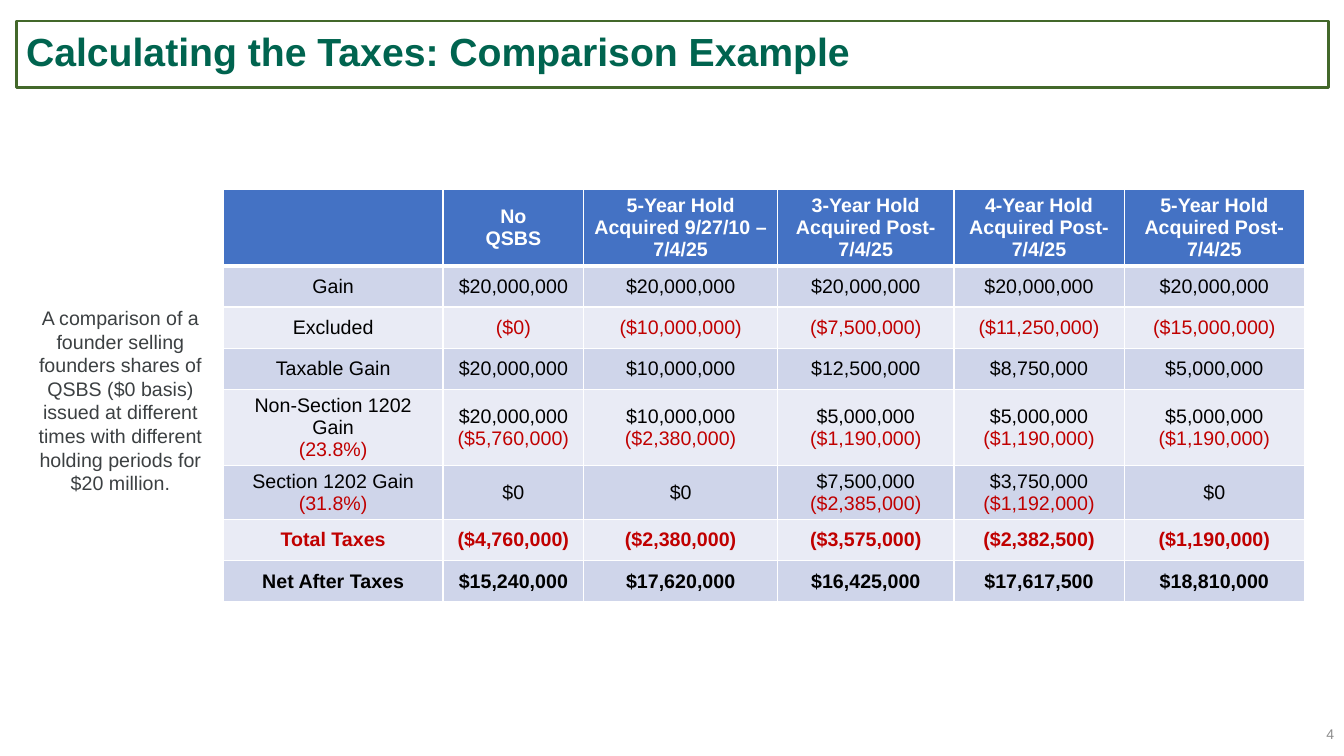
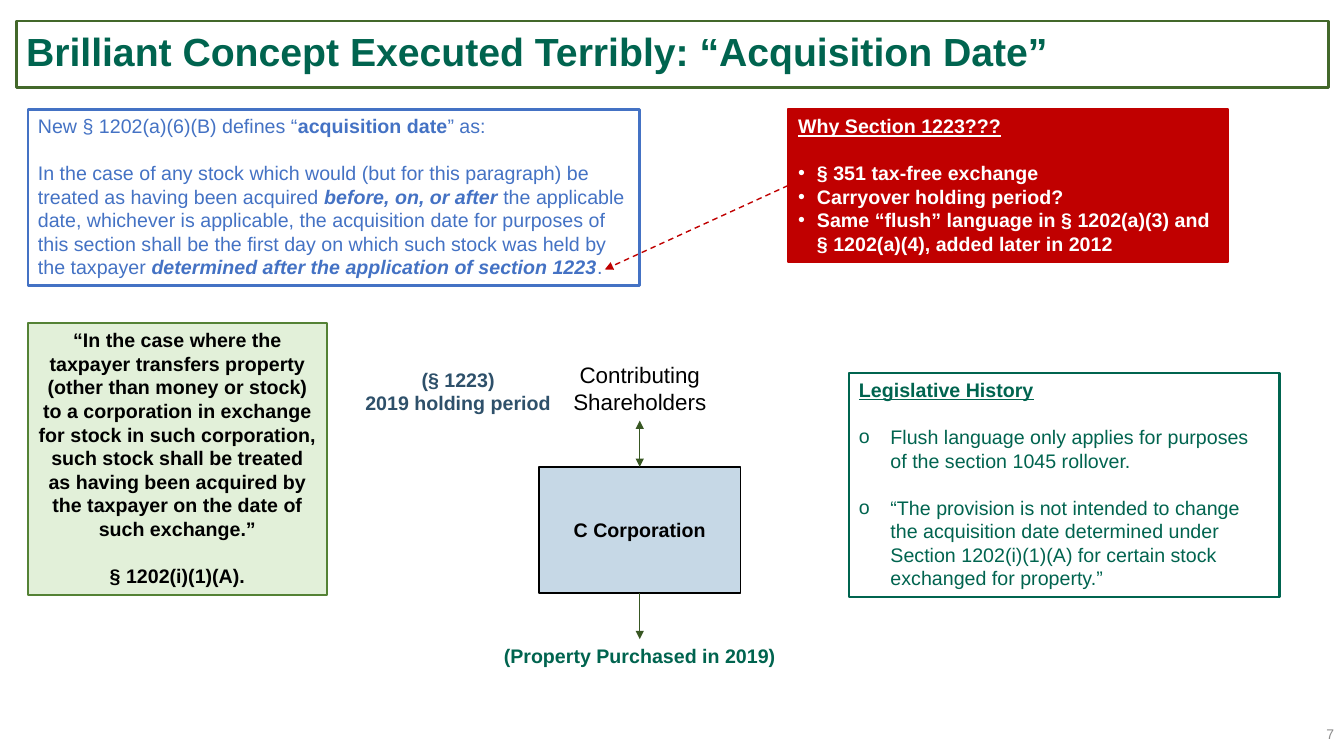
from dataclasses import dataclass
from typing import Any, Optional

from lxml.etree import SubElement
from pptx import Presentation
from pptx.dml.color import RGBColor
from pptx.enum.dml import MSO_LINE
from pptx.enum.shapes import MSO_CONNECTOR, MSO_SHAPE
from pptx.enum.text import MSO_ANCHOR as Anchor, PP_ALIGN as Align
from pptx.oxml.ns import qn
from pptx.util import Pt


@dataclass(frozen=True)
class Theme:
    font: str = "Arial"
    title_size: float = 28
    label_size: float = 16
    body_size: float = 14
    number_size: float = 10
    text_pitch: float = 1.2
    table_pitch: float = 1.12
    white: str = "FFFFFF"
    black: str = "000000"
    green: str = "00644F"
    title_frame: str = "43682A"
    arrow_green: str = "385723"
    statute_fill: str = "E2F0D9"
    statute_frame: str = "548235"
    blue: str = "4472C4"
    navy: str = "2E506A"
    corporation: str = "C6D8E6"
    red: str = "C00000"
    grey: str = "8C8C8C"
    caption: str = "3C4042"
    bands: tuple[str, str] = ("CFD5EA", "E9EBF5")


THEME = Theme()


@dataclass(frozen=True)
class Run:
    text: str
    bold: bool = False
    italic: bool = False
    underline: bool = False


@dataclass(frozen=True)
class Para:
    runs: tuple[Run, ...]
    gap: bool = False
    bullet: str = ""
    indent: float = 0


@dataclass(frozen=True)
class Panel:
    at: tuple[float, float, float, float]
    paras: tuple[Para, ...]
    color: str
    size: float = THEME.body_size
    align: Align = Align.LEFT
    anchor: Anchor = Anchor.TOP
    wrap: bool = True
    fill: Optional[str] = None
    frame: Optional[str] = None
    weight: float = 1
    spacing: Optional[float] = None


@dataclass(frozen=True)
class Arrow:
    start: tuple[float, float]
    end: tuple[float, float]
    color: str
    weight: float = 1
    ends: tuple[str, ...] = ("tailEnd",)
    dashed: bool = False


def rgb(color: str) -> RGBColor:
    return RGBColor.from_string(color)


def apply(target: Any, values: dict[str, Any]) -> None:
    for name, value in values.items():
        setattr(target, name, value)


def plain(*lines: str, bold: bool = False) -> tuple[Para, ...]:
    return tuple(Para((Run(line, bold),)) for line in lines)


def add_run(paragraph: Any, run: Run, size: float, color: str) -> None:
    piece = paragraph.add_run()
    piece.text = run.text
    apply(piece.font, {"name": THEME.font, "size": Pt(size), "bold": run.bold,
                       "italic": run.italic, "underline": run.underline})
    piece.font.color.rgb = rgb(color)


def add_bullet(paragraph: Any, para: Para, color: str) -> None:
    props = paragraph._p.get_or_add_pPr()
    props.set("marL", str(Pt(para.indent)))
    props.set("indent", str(-Pt(para.indent)))
    bullet_color = SubElement(props, qn("a:buClr"))
    SubElement(bullet_color, qn("a:srgbClr"), val=color)
    SubElement(props, qn("a:buFont"), typeface=THEME.font)
    SubElement(props, qn("a:buChar"), char=para.bullet)


def draw_panel(slide: Any, panel: Panel) -> None:
    place = [Pt(value) for value in panel.at]
    if panel.fill or panel.frame:
        shape = slide.shapes.add_shape(MSO_SHAPE.RECTANGLE, *place)
        shape.shadow.inherit = False
    else:
        shape = slide.shapes.add_textbox(*place)
    if panel.fill:
        shape.fill.solid()
        shape.fill.fore_color.rgb = rgb(panel.fill)
    else:
        shape.fill.background()
    if panel.frame:
        shape.line.color.rgb = rgb(panel.frame)
        shape.line.width = Pt(panel.weight)
    frame = shape.text_frame
    apply(frame, {"word_wrap": panel.wrap, "vertical_anchor": panel.anchor})
    pitch = Pt(panel.size * THEME.text_pitch)
    for index, para in enumerate(panel.paras):
        paragraph = frame.add_paragraph() if index else frame.paragraphs[0]
        apply(paragraph, {"alignment": panel.align,
                          "line_spacing": panel.spacing or pitch,
                          "space_before": pitch if para.gap else Pt(0)})
        if para.bullet:
            add_bullet(paragraph, para, panel.color)
        for run in para.runs:
            add_run(paragraph, run, panel.size, panel.color)


def draw_arrow(slide: Any, arrow: Arrow) -> None:
    points = [Pt(value) for value in arrow.start + arrow.end]
    connector = slide.shapes.add_connector(MSO_CONNECTOR.STRAIGHT, *points)
    connector.line.color.rgb = rgb(arrow.color)
    connector.line.width = Pt(arrow.weight)
    if arrow.dashed:
        connector.line.dash_style = MSO_LINE.DASH
    outline = connector.line._get_or_add_ln()
    for end in arrow.ends:
        SubElement(outline, qn(f"a:{end}"), type="triangle")
    SubElement(connector._element.spPr, qn("a:effectLst"))


def add_slide(deck: Any, title: str, number: int) -> Any:
    slide = deck.slides.add_slide(deck.slide_layouts[6])
    draw_panel(slide, Panel((11.5, 15, 937.5, 47.5), plain(title, bold=True), THEME.green,
                            THEME.title_size, anchor=Anchor.MIDDLE,
                            frame=THEME.title_frame, weight=2, spacing=0.9))
    draw_panel(slide, Panel((932, 510, 28, 29), plain(str(number)), THEME.grey,
                            THEME.number_size, Align.RIGHT, Anchor.MIDDLE))
    return slide


def add_borders(cell: Any, header: bool) -> None:
    props = cell._tc.get_or_add_tcPr()
    for side in "LRTB":
        width = Pt(3 if header and side == "B" else 1)
        edge = SubElement(props, qn(f"a:ln{side}"), w=str(width))
        paint = SubElement(edge, qn("a:solidFill"))
        SubElement(paint, qn("a:srgbClr"), val=THEME.white)


TAX_ROWS = (
    ("", "No\nQSBS", "5-Year Hold\nAcquired 9/27/10 –\n7/4/25",
     "3-Year Hold\nAcquired Post-\n7/4/25", "4-Year Hold\nAcquired Post-\n7/4/25",
     "5-Year Hold\nAcquired Post-\n7/4/25"),
    ("Gain",) + ("$20,000,000",) * 5,
    ("Excluded", "($0)", "($10,000,000)", "($7,500,000)", "($11,250,000)", "($15,000,000)"),
    ("Taxable Gain", "$20,000,000", "$10,000,000", "$12,500,000", "$8,750,000", "$5,000,000"),
    ("Non-Section 1202 Gain\n(23.8%)", "$20,000,000\n($5,760,000)",
     "$10,000,000\n($2,380,000)") + ("$5,000,000\n($1,190,000)",) * 3,
    ("Section 1202 Gain\n(31.8%)", "$0", "$0", "$7,500,000\n($2,385,000)",
     "$3,750,000\n($1,192,000)", "$0"),
    ("Total Taxes", "($4,760,000)", "($2,380,000)", "($3,575,000)", "($2,382,500)",
     "($1,190,000)"),
    ("Net After Taxes", "$15,240,000", "$17,620,000", "$16,425,000", "$17,617,500",
     "$18,810,000"),
)
COLUMN_WIDTHS = (157, 100.5, 138.5, 126, 121.5, 129)
ROW_HEIGHTS = (54, 29.5, 29.5, 29.5, 54, 38.5, 29.5, 29.5)
BOLD_ROWS = ("", "Total Taxes", "Net After Taxes")


def line_color(line: str, header: bool) -> str:
    if header:
        return THEME.white
    return THEME.red if line.startswith("(") or line == "Total Taxes" else THEME.black


def fill_cell(cell: Any, text: str, row: int) -> None:
    header = row == 0
    add_borders(cell, header)
    cell.fill.solid()
    cell.fill.fore_color.rgb = rgb(THEME.blue if header else THEME.bands[(row - 1) % 2])
    cell.vertical_anchor = Anchor.MIDDLE
    for index, line in enumerate(text.split("\n")):
        frame = cell.text_frame
        paragraph = frame.add_paragraph() if index else frame.paragraphs[0]
        apply(paragraph, {"alignment": Align.CENTER,
                          "line_spacing": Pt(THEME.body_size * THEME.table_pitch)})
        if line:
            add_run(paragraph, Run(line, TAX_ROWS[row][0] in BOLD_ROWS),
                    THEME.body_size, line_color(line, header))


def build_comparison(deck: Any) -> None:
    slide = add_slide(deck, "Calculating the Taxes: Comparison Example", 4)
    draw_panel(slide, Panel(
        (20, 210, 132, 152),
        plain("A comparison of a founder selling founders shares of QSBS ($0 basis) issued at "
              "different times with different holding periods for $20 million."),
        THEME.caption, align=Align.CENTER, anchor=Anchor.MIDDLE))
    taxes = slide.shapes.add_table(
        len(TAX_ROWS), len(COLUMN_WIDTHS), Pt(159.5), Pt(135.5),
        Pt(sum(COLUMN_WIDTHS)), Pt(sum(ROW_HEIGHTS))).table
    for column, width in zip(taxes.columns, COLUMN_WIDTHS):
        column.width = Pt(width)
    for row, (texts, height) in enumerate(zip(TAX_ROWS, ROW_HEIGHTS)):
        taxes.rows[row].height = Pt(height)
        for column, text in enumerate(texts):
            fill_cell(taxes.cell(row, column), text, row)


DEFINITION = (
    Para((Run("New § 1202(a)(6)(B) defines “"), Run("acquisition date", True), Run("” as:"))),
    Para((Run("In the case of any stock which would (but for this paragraph) be treated as "
              "having been acquired "),
          Run("before, on, or after ", True, True),
          Run("the applicable date, whichever is applicable, the acquisition date for purposes "
              "of this section shall be the first day on which such stock was held by the "
              "taxpayer "),
          Run("determined after the application of section 1223", True, True),
          Run(".")), gap=True),
)
WHY_1223 = (Para((Run("Why Section 1223???", True, underline=True),)),) + tuple(
    Para((Run(reason, True),), gap=index == 0, bullet="•", indent=13.5)
    for index, reason in enumerate((
        "§ 351 tax-free exchange",
        "Carryover holding period?",
        "Same “flush” language in § 1202(a)(3) and § 1202(a)(4), added later in 2012")))
STATUTE = (
    Para((Run("“In the case where the taxpayer transfers property (other than money or stock) "
              "to a corporation in exchange for stock in such corporation, such stock shall be "
              "treated as having been acquired by the taxpayer on the date of such exchange.”",
              True),)),
    Para((Run("§ 1202(i)(1)(A).", True),), gap=True),
)
HISTORY = (Para((Run("Legislative History", True, underline=True),)),) + tuple(
    Para((Run(point),), gap=True, bullet="o", indent=22.5) for point in (
        "Flush language only applies for purposes of the section 1045 rollover.",
        "“The provision is not intended to change the acquisition date determined under "
        "Section 1202(i)(1)(A) for certain stock exchanged for property.”"))

ACQUISITION_PANELS = (
    Panel((20, 78, 437, 126), DEFINITION, THEME.blue, frame=THEME.blue, weight=2),
    Panel((563, 78, 314.5, 109), WHY_1223, THEME.white, fill=THEME.red, frame=THEME.red,
          weight=1.5),
    Panel((385, 333.5, 144, 90), plain("C Corporation", bold=True), THEME.black,
          align=Align.CENTER, anchor=Anchor.MIDDLE, fill=THEME.corporation, frame=THEME.black),
    Panel((402, 254, 110, 46), plain("Contributing", "Shareholders"), THEME.black,
          THEME.label_size, Align.CENTER, Anchor.MIDDLE, wrap=False),
    Panel((352, 456.5, 210, 24.5), plain("(Property Purchased in 2019)", bold=True),
          THEME.green, align=Align.CENTER, wrap=False),
    Panel((253.5, 259, 147.5, 41), plain("(§ 1223)", "2019 holding period", bold=True),
          THEME.navy, align=Align.CENTER, wrap=False),
    Panel((20, 231, 213.5, 194), STATUTE, THEME.black, align=Align.CENTER,
          fill=THEME.statute_fill, frame=THEME.statute_frame, weight=1.5),
    Panel((606.5, 266.5, 307.5, 160), HISTORY, THEME.green, frame=THEME.green, weight=2),
)
ACQUISITION_ARROWS = (
    Arrow((457, 300.5), (457, 333.5), THEME.arrow_green, 0.75, ("headEnd", "tailEnd")),
    Arrow((457, 423.5), (457, 456.5), THEME.arrow_green),
    Arrow((563, 132.5), (432, 192.5), THEME.red, dashed=True),
)


def build_acquisition(deck: Any) -> None:
    slide = add_slide(deck, "Brilliant Concept Executed Terribly: “Acquisition Date”", 7)
    for panel in ACQUISITION_PANELS:
        draw_panel(slide, panel)
    for arrow in ACQUISITION_ARROWS:
        draw_arrow(slide, arrow)


def main() -> None:
    deck = Presentation()
    apply(deck, {"slide_width": Pt(960), "slide_height": Pt(540)})
    build_comparison(deck)
    build_acquisition(deck)
    deck.save("out.pptx")


if __name__ == "__main__":
    main()
